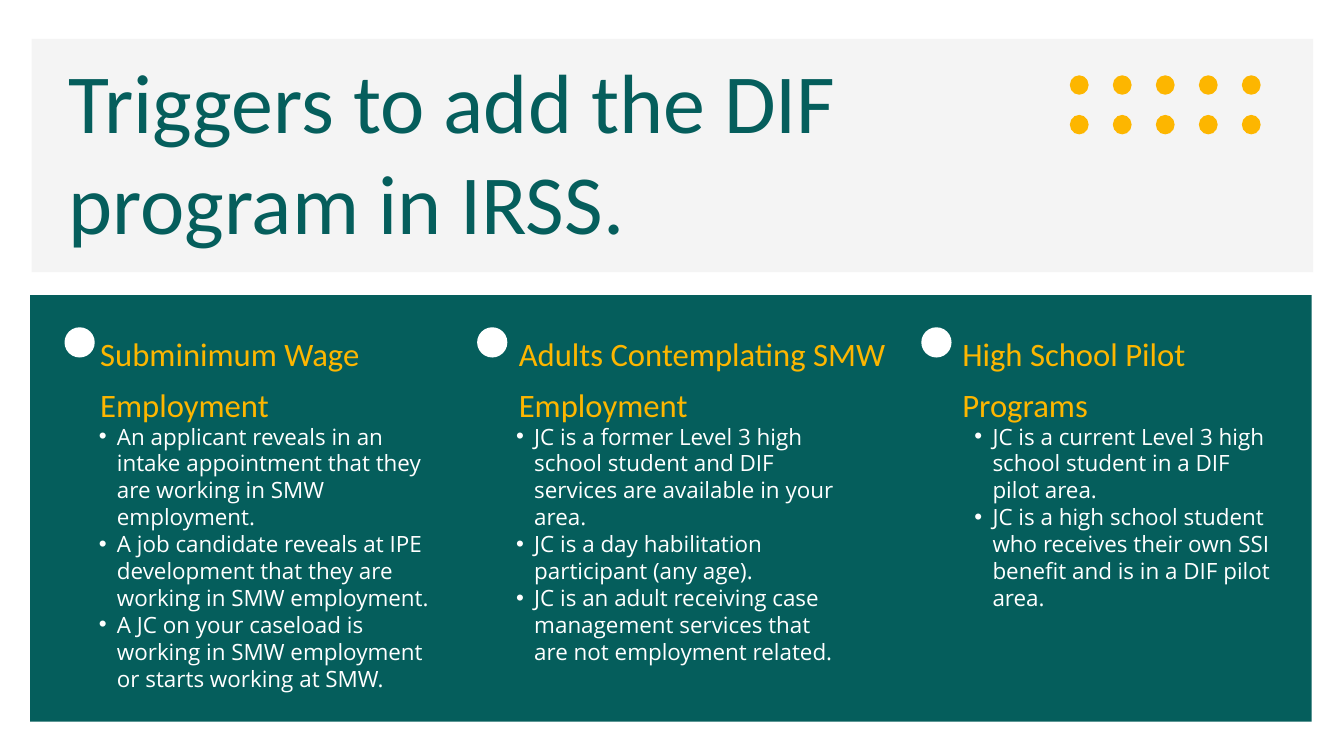
from lxml import etree
from pptx import Presentation
from pptx.dml.color import RGBColor
from pptx.enum.shapes import MSO_SHAPE
from pptx.oxml.ns import qn
from pptx.util import Inches, Pt

RECTANGLE = MSO_SHAPE.RECTANGLE
OVAL = MSO_SHAPE.OVAL

TEAL = RGBColor(0x05, 0x5E, 0x5C)
GOLD = RGBColor(0xFD, 0xB6, 0x00)
PALE = RGBColor(0xF4, 0xF4, 0xF4)
WHITE = RGBColor(0xFF, 0xFF, 0xFF)

TITLE_FORMAT = {"name": "Calibri", "size": Pt(90), "color": TEAL, "spacing": Pt(108)}
HEADING_FORMAT = {"name": "Calibri", "size": Pt(35), "color": GOLD, "spacing": 1.3}
BODY_FORMAT = {"name": "Open Sans", "size": Pt(24), "color": WHITE, "spacing": Pt(28.8)}

presentation = Presentation()
presentation.slide_width = Inches(20)
presentation.slide_height = Inches(11.25)
slide = presentation.slides.add_slide(presentation.slide_layouts[6])


def add_block(kind, left, top, width, height, color):
    shape = slide.shapes.add_shape(
        kind, Inches(left), Inches(top), Inches(width), Inches(height))
    shape.shadow.inherit = False
    shape.fill.solid()
    shape.fill.fore_color.rgb = color
    shape.line.fill.background()


def add_text(left, top, width, height, lines, text_format, bulleted=False):
    box = slide.shapes.add_textbox(
        Inches(left), Inches(top), Inches(width), Inches(height))
    frame = box.text_frame
    frame.word_wrap = True
    for side in ("left", "top", "right", "bottom"):
        setattr(frame, f"margin_{side}", 0)
    frame.text = "\n".join(lines)
    for paragraph in frame.paragraphs:
        paragraph.line_spacing = text_format["spacing"]
        font = paragraph.runs[0].font
        for attribute in ("name", "size"):
            setattr(font, attribute, text_format[attribute])
        font.color.rgb = text_format["color"]
        if bulleted:
            paragraph.level = 1
            properties = paragraph._p.get_or_add_pPr()
            properties.set("marL", str(Inches(0.5)))
            properties.set("indent", str(Inches(-0.27)))
            bullet_color = etree.SubElement(properties, qn("a:buClr"))
            etree.SubElement(bullet_color, qn("a:srgbClr"), val=str(WHITE))
            etree.SubElement(properties, qn("a:buFont"), typeface="Arial")
            etree.SubElement(properties, qn("a:buChar"), char="•")


# Title band with its grid of dots
add_block(RECTANGLE, 0.47, 0.58, 19.07, 3.47, PALE)
for row in range(2):
    for column in range(5):
        add_block(OVAL, 15.92 + 0.64 * column, 1.12 + 0.59 * row, 0.28, 0.29, GOLD)
add_text(1.02, 0.74, 14.04, 3.03, ["Triggers to add the DIF program in IRSS."], TITLE_FORMAT)

# Panel with three trigger columns:
# marker left, (heading left, width), (list left, width, height), heading, triggers
add_block(RECTANGLE, 0.45, 4.39, 19.07, 6.35, TEAL)
columns = [
    (0.96, (1.49, 5.24), (1.24, 5.24, 4.04), "Subminimum Wage Employment", [
        "An applicant reveals in an intake appointment that they are working in SMW employment.",
        "A job candidate reveals at IPE development that they are working in SMW employment.",
        "A JC on your caseload is working in SMW employment or starts working at SMW.",
    ]),
    (7.1, (7.72, 5.83), (7.45, 5.03, 3.64), "Adults Contemplating SMW Employment", [
        "JC is a former Level 3 high school student and DIF services are available in your area.",
        "JC is a day habilitation participant (any age).",
        "JC is an adult receiving case management services that are not employment related.",
    ]),
    (13.71, (14.32, 3.93), (14.27, 4.77, 2.83), "High School Pilot Programs", [
        "JC is a current Level 3 high school student in a DIF pilot area.",
        "JC is a high school student who receives their own SSI benefit and is in a DIF pilot area.",
    ]),
]
for marker_left, heading_place, list_place, heading, triggers in columns:
    heading_left, heading_width = heading_place
    list_left, list_width, list_height = list_place
    add_text(list_left, 6.29, list_width, list_height, triggers, BODY_FORMAT, bulleted=True)
    add_text(heading_left, 4.79, heading_width, 1.35, [heading], HEADING_FORMAT)
    add_block(OVAL, marker_left, 4.87, 0.45, 0.45, WHITE)

presentation.save("out.pptx")
